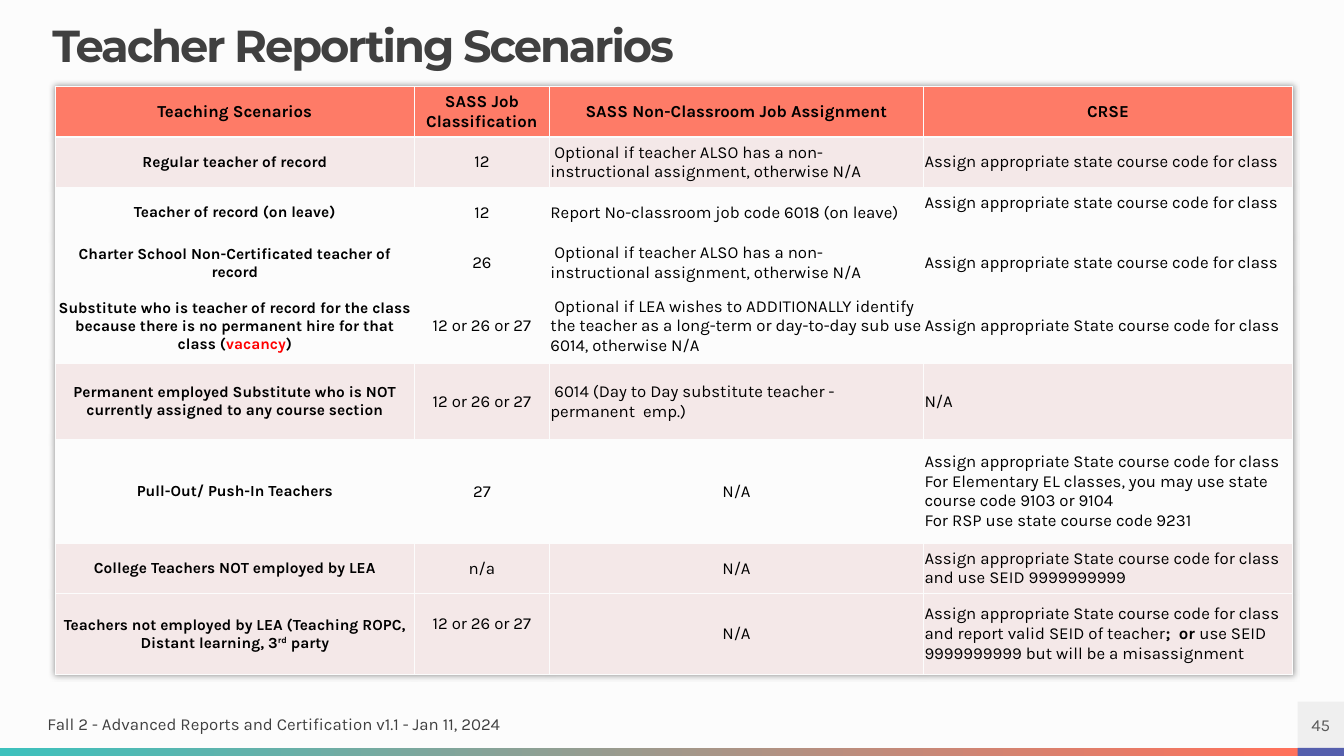
from lxml import etree
from pptx import Presentation
from pptx.dml.color import RGBColor
from pptx.enum.shapes import MSO_SHAPE as SHAPE
from pptx.enum.text import MSO_ANCHOR as ANCHOR, PP_ALIGN as ALIGN
from pptx.oxml import parse_xml
from pptx.oxml.ns import nsdecls, qn
from pptx.util import Inches, Pt

COLORS = {
    "paper": "FCFCFC", "coral": "FE7B67", "blush": "F4E8E8", "black": "000000",
    "red": "FF0000", "dark": "404040", "grey": "595959", "page": "EFEFEF",
    "teal": "3DC1BD", "orange": "FF715B", "indigo": "555FAD",
}
BODY_FONT, TITLE_FONT = "Karla", "Montserrat"

# Table content: a cell is a list of paragraphs, a paragraph a list of (text, style) runs
COL_WIDTHS = [3.56, 1.34, 3.71, 3.66]
ROW_HEIGHTS = [0.5, 0.5, 0.5, 0.5, 0.75, 0.75, 1.03, 0.5, 0.8]
HEADERS = ["Teaching Scenarios", "SASS Job Classification",
           "SASS Non-Classroom Job Assignment", "CRSE"]
OPTIONAL = " Optional if teacher ALSO has a non-instructional assignment, otherwise N/A"
ASSIGN_LOWER = "Assign appropriate state course code for class"
ASSIGN = "Assign appropriate State course code for class"
SCENARIOS = [
    ("blush", ["Regular teacher of record", "12", OPTIONAL, ASSIGN_LOWER]),
    ("paper", ["Teacher of record (on leave)", "12",
               "Report No-classroom job code 6018 (on leave)", ASSIGN_LOWER]),
    ("paper", ["Charter School Non-Certificated teacher of record", "26",
               OPTIONAL, ASSIGN_LOWER]),
    ("paper", [[[("Substitute who is teacher of record for the class because there is "
                  "no permanent hire for that class (", ""), ("vacancy", "red"), (")", "")]],
               "12 or 26 or 27",
               " Optional if LEA wishes to ADDITIONALLY identify the teacher as a "
               "long-term or day-to-day sub use 6014, otherwise N/A", ASSIGN]),
    ("blush", ["Permanent employed Substitute who is NOT currently assigned to any course section",
               "12 or 26 or 27",
               " 6014 (Day to Day substitute teacher - permanent  emp.)", "N/A"]),
    ("paper", ["Pull-Out/ Push-In Teachers", "27", "N/A",
               [[(ASSIGN, "")],
                [("For Elementary EL classes, you may use state course code 9103 or 9104", "")],
                [("For RSP use state course code 9231", "")]]]),
    ("blush", ["College Teachers NOT employed by LEA", "n/a", "N/A",
               ASSIGN + " and use SEID 9999999999"]),
    ("blush", [[[("Teachers not employed by LEA (Teaching ROPC, Distant learning, 3", ""),
                 ("rd", "super"), (" party", "")]],
               "12 or 26 or 27", "N/A",
               [[(ASSIGN + " and report valid SEID of teacher", ""), (";  or ", "bold"),
                 ("use SEID 9999999999 but will be a misassignment", "")]]]),
]
RAISED_CELLS = {(2, 3), (8, 1)}  # text sits half a line above the middle


def rgb(name):
    return RGBColor.from_string(COLORS[name])


def set_font(font, size, color, bold=False, name=BODY_FONT):
    font.name, font.size, font.bold = name, Pt(size), bold
    font.color.rgb = rgb(color)


def add_box(slide, x, y, w, h, fill, fill_to=None):
    s = slide.shapes.add_shape(SHAPE.RECTANGLE, Inches(x), Inches(y), Inches(w), Inches(h))
    s.shadow.inherit = False
    s.line.fill.background()
    if fill_to:
        s.fill.gradient()
        s.fill.gradient_angle = 0
        for stop, color in zip(s.fill.gradient_stops, (fill, fill_to)):
            stop.color.rgb = rgb(color)
    else:
        s.fill.solid()
        s.fill.fore_color.rgb = rgb(fill)
    return s


def write_line(s, text, size, color, align=ALIGN.LEFT, inset=(0, 0), **font):
    tf = s.text_frame
    tf.word_wrap = True
    tf.vertical_anchor = ANCHOR.MIDDLE
    tf.margin_left = tf.margin_right = Inches(inset[0])
    tf.margin_top = tf.margin_bottom = Inches(inset[1])
    p = tf.paragraphs[0]
    p.text, p.alignment = text, align
    set_font(p.font, size, color, **font)
    return p


def add_text(slide, x, y, w, h, *args, **kwargs):
    s = slide.shapes.add_textbox(Inches(x), Inches(y), Inches(w), Inches(h))
    return write_line(s, *args, **kwargs)


def add_borders(cell):
    tc_pr = cell._tc.get_or_add_tcPr()
    for side in "LRTB":
        ln = etree.SubElement(tc_pr, qn(f"a:ln{side}"), w=str(Pt(1)))
        fill = etree.SubElement(ln, qn("a:solidFill"))
        etree.SubElement(fill, qn("a:srgbClr"), val=COLORS["paper"])


def fill_cell(cell, content, fill, size, bold, align, raised=False):
    add_borders(cell)
    cell.fill.solid()
    cell.fill.fore_color.rgb = rgb(fill)
    cell.vertical_anchor = ANCHOR.MIDDLE
    cell.margin_left = cell.margin_right = Inches(0.01)
    cell.margin_top = 0
    cell.margin_bottom = Inches(0.2 if raised else 0)
    tf = cell.text_frame
    paragraphs = [[(content, "")]] if isinstance(content, str) else content
    for i, runs in enumerate(paragraphs):
        p = tf.add_paragraph() if i else tf.paragraphs[0]
        p.alignment = align
        for text, style in runs:
            r = p.add_run()
            r.text = text
            set_font(r.font, size, "red" if style == "red" else "black",
                     bold or style == "bold")
            if style == "super":
                r.font._element.set("baseline", "30000")


def add_scenario_table(slide):
    frame = slide.shapes.add_table(len(ROW_HEIGHTS), len(COL_WIDTHS), Inches(0.55), Inches(0.86),
                                   Inches(sum(COL_WIDTHS)), Inches(sum(ROW_HEIGHTS)))
    table = frame.table
    table.horz_banding = False
    for col, width in zip(table.columns, COL_WIDTHS):
        col.width = Inches(width)
    for row, height in zip(table.rows, ROW_HEIGHTS):
        row.height = Inches(height)
    # Soft shadow around the table
    table._tbl.tblPr.insert(0, parse_xml(
        f'<a:effectLst {nsdecls("a")}><a:outerShdw blurRad="50800" dist="0" algn="ctr">'
        '<a:srgbClr val="000000"><a:alpha val="40000"/></a:srgbClr>'
        '</a:outerShdw></a:effectLst>'))
    for c, header in enumerate(HEADERS):
        fill_cell(table.cell(0, c), header, "coral", 12, True, ALIGN.CENTER)
    for r, (fill, contents) in enumerate(SCENARIOS, start=1):
        for c, content in enumerate(contents):
            centred = c < 2 or (c == 2 and content == "N/A")
            fill_cell(table.cell(r, c), content, fill, 12 if c else 11, c == 0,
                      ALIGN.CENTER if centred else ALIGN.LEFT, (r, c) in RAISED_CELLS)


def main():
    prs = Presentation()
    prs.slide_width, prs.slide_height = Inches(13.33), Inches(7.5)
    slide = prs.slides.add_slide(prs.slide_layouts[6])
    slide.background.fill.solid()
    slide.background.fill.fore_color.rgb = rgb("paper")

    # Title
    p = add_text(slide, 0.47, 0.24, 12.4, 0.47, "Teacher Reporting Scenarios", 32, "dark",
                 inset=(0.05, 0.03), bold=True, name=TITLE_FONT)
    p.line_spacing = 0.9
    p.runs[0].font._element.set("spc", "-150")

    add_scenario_table(slide)

    # Footer
    page = add_box(slide, 12.87, 6.96, 0.46, 0.46, "page")
    write_line(page, "45", 12, "grey", ALIGN.CENTER)
    add_box(slide, 0, 7.42, 12.87, 0.08, "teal", "orange")
    add_box(slide, 12.87, 7.42, 0.46, 0.08, "indigo")
    add_text(slide, 0.47, 6.96, 5.98, 0.45,
             "Fall 2 - Advanced Reports and Certification v1.1 - Jan 11, 2024", 12, "dark")

    prs.save("out.pptx")


if __name__ == "__main__":
    main()
